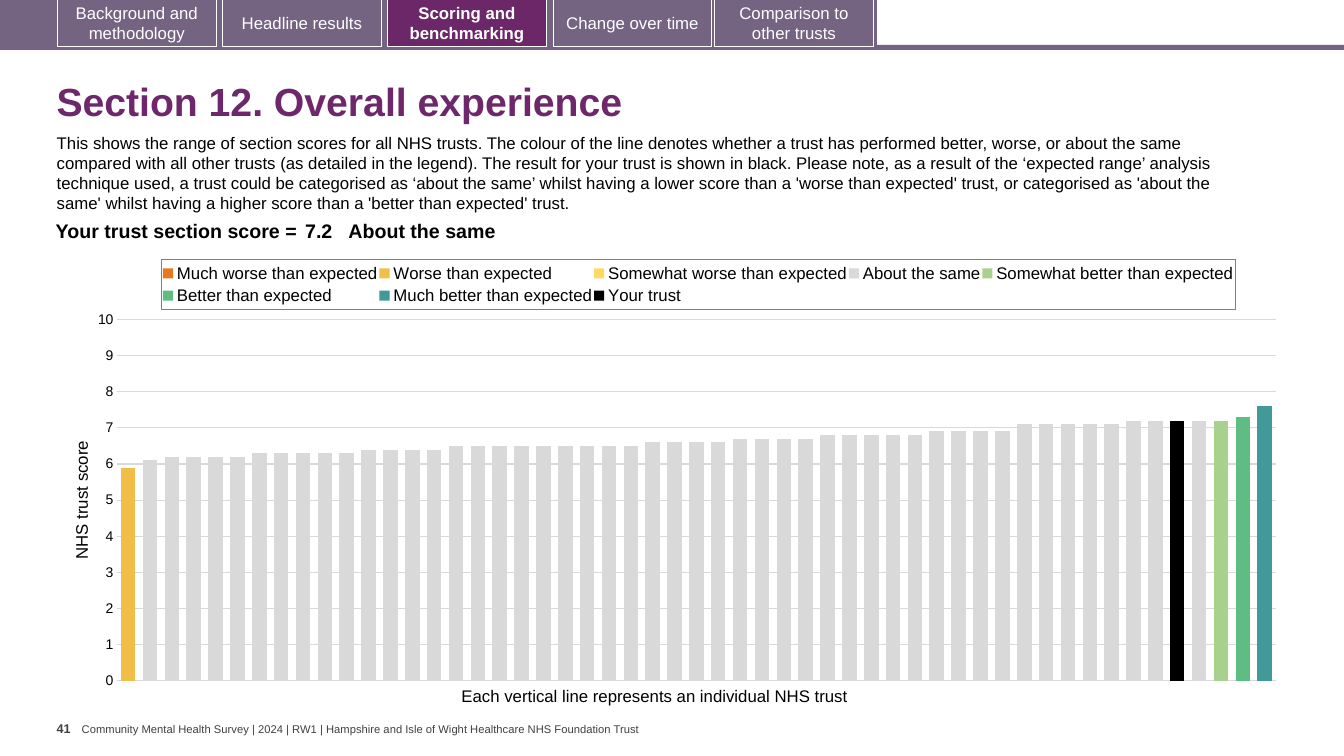
from copy import deepcopy

from pptx import Presentation
from pptx.chart.axis import ValueAxis
from pptx.chart.data import CategoryChartData
from pptx.dml.color import RGBColor
from pptx.enum import chart as kinds, shapes, text
from pptx.oxml import parse_xml
from pptx.oxml.ns import nsdecls
from pptx.util import Cm, Pt

TABS = [
    ("Background and methodology", 1.45),
    ("Headline results", 5.61),
    ("Scoring and benchmarking", 9.77),
    ("Change over time", 13.94),
    ("Comparison to other trusts", 18.01),
]
ACTIVE = "Scoring and benchmarking"
TITLE = "Section 12. Overall experience"
INTRO = (
    "This shows the range of section scores for all NHS trusts. The colour of the line "
    "denotes whether a trust has performed better, worse, or about the same compared with "
    "all other trusts (as detailed in the legend). The result for your trust is shown in "
    "black. Please note, as a result of the ‘expected range’ analysis technique used, a "
    "trust could be categorised as ‘about the same’ whilst having a lower score than a "
    "'worse than expected' trust, or categorised as 'about the same' whilst having a higher "
    "score than a 'better than expected' trust."
)
SCORE = [
    ("Your trust section score =", 6.68, 0.1, text.PP_ALIGN.RIGHT),
    ("7.2", 1.19, 0.1, text.PP_ALIGN.LEFT),
    ("About the same", 21.82, 0, text.PP_ALIGN.LEFT),
]
AXIS = "NHS trust score"
CAPTION = "Each vertical line represents an individual NHS trust"
PAGE = "41"
FOOTER = ("Community Mental Health Survey | 2024 | RW1 | "
          "Hampshire and Isle of Wight Healthcare NHS Foundation Trust")
COUNT = 53
SAME = ([6.1] + [6.2] * 4 + [6.3] * 5 + [6.4] * 4 + [6.5] * 9 + [6.6] * 4
        + [6.7] * 4 + [6.8] * 5 + [6.9] * 4 + [7.1] * 5 + [7.2] * 4)
SERIES = [
    ("Much worse than expected", "E87722", 0, []),
    ("Worse than expected", "F1BE48", 0, [5.9]),
    ("Somewhat worse than expected", "FFD966", 0, []),
    ("About the same", "D9D9D9", 1, SAME),
    ("Somewhat better than expected", "A9D18E", 50, [7.2]),
    ("Better than expected", "5FBD83", 51, [7.3]),
    ("Much better than expected", "419999", 52, [7.6]),
    ("Your trust", "000000", 48, [7.2]),
]


def tint(code):
    return RGBColor.from_string(code)


def style(font, size, code="000000", bold=False, face="Arial"):
    font.name, font.size, font.bold = face, Pt(size), bold
    font.color.rgb = tint(code)


def write(frame, words, size, code="000000", bold=False, align=text.PP_ALIGN.LEFT):
    frame.text = words
    para = frame.paragraphs[0]
    para.alignment = align
    style(para.runs[0].font, size, code, bold)


def label(words, box, size, code="000000", bold=False, wrap=False, pads=None):
    frame = slide.shapes.add_textbox(*map(Cm, box)).text_frame
    frame.word_wrap = wrap
    if pads:
        frame.margin_left = frame.margin_right = Cm(pads[0])
        frame.margin_top = frame.margin_bottom = Cm(pads[1])
    write(frame, words, size, code, bold)
    return frame


def block(box, code, edge=None):
    shape = slide.shapes.add_shape(shapes.MSO_SHAPE.RECTANGLE, *map(Cm, box))
    shape.shadow.inherit = False
    shape.fill.solid()
    shape.fill.fore_color.rgb = tint(code)
    if edge:
        shape.line.color.rgb = tint(edge)
        shape.line.width = Pt(0.75)
    else:
        shape.line.fill.background()
    return shape


def layout(x, y, w, h, inner=False):
    target = '<c:layoutTarget val="inner"/>' if inner else ""
    return parse_xml(
        f'<c:layout {nsdecls("c")}><c:manualLayout>{target}'
        '<c:xMode val="edge"/><c:yMode val="edge"/>'
        f'<c:x val="{x}"/><c:y val="{y}"/><c:w val="{w}"/><c:h val="{h}"/>'
        '</c:manualLayout></c:layout>')


def place(parent, spot, item):
    for old in parent.xpath("./c:layout"):
        parent.remove(old)
    parent.insert(spot, item)


def split(area):
    bars, cat, val = (area.xpath(f"./c:{tag}")[0] for tag in ("barChart", "catAx", "valAx"))
    extra = [deepcopy(item) for item in (bars, cat, val)]
    own = bars.xpath("./c:ser")
    bars.remove(own[-1])
    for ser in extra[0].xpath("./c:ser")[:-1]:
        extra[0].remove(ser)
    olds = [item.get("val") for item in bars.xpath("./c:axId")]
    fresh = dict(zip(olds, ("5001", "5002")))
    for part in extra:
        for ref in part.xpath("./c:axId | ./c:crossAx"):
            ref.set("val", fresh[ref.get("val")])
    bars.addnext(extra[0])
    val.addnext(extra[1])
    val.addnext(extra[2])
    extra[2].xpath("./c:axPos")[0].set("val", "r")
    extra[2].xpath("./c:crosses")[0].set("val", "max")
    right = ValueAxis(extra[2])
    right.has_title = right.has_major_gridlines = False
    right.major_tick_mark = kinds.XL_TICK_MARK.OUTSIDE
    right.tick_label_position = kinds.XL_TICK_LABEL_POSITION.NONE
    style(right.tick_labels.font, 12, "595959", face="Calibri")


deck = Presentation()
deck.slide_width, deck.slide_height = Cm(33.87), Cm(19.05)
slide = deck.slides.add_slide(deck.slide_layouts[5])

block((0, 1.13, 33.87, 0.13), "756382")
block((0, 0, 22.1, 1.19), "756382")
for words, left in TABS:
    chosen = words == ACTIVE
    tab = block((left, -0.03, 4, 1.2), "6B2768" if chosen else "756382", "FFFFFF")
    tab.text_frame.word_wrap = True
    tab.text_frame.vertical_anchor = text.MSO_ANCHOR.MIDDLE
    write(tab.text_frame, words, 12, "FFFFFF", chosen, text.PP_ALIGN.CENTER)

title = slide.shapes.title
title.left, title.top, title.width, title.height = map(Cm, (1.17, 1.7, 31.72, 1.83))
title.text_frame.auto_size = text.MSO_AUTO_SIZE.NONE
title.text_frame.vertical_anchor = text.MSO_ANCHOR.MIDDLE
write(title.text_frame, TITLE, 28, "6D276A", True)
title.text_frame.paragraphs[0].line_spacing = 0.9

label(INTRO, (1.18, 3.22, 30.81, 2.31), 12, wrap=True)

data = CategoryChartData(number_format="0.0")
data.categories = [str(n + 1) for n in range(COUNT)]
for name, code, start, vals in SERIES:
    rest = COUNT - start - len(vals)
    data.add_series(name, [None] * start + vals + [None] * rest)
chart = slide.shapes.add_chart(
    kinds.XL_CHART_TYPE.COLUMN_CLUSTERED,
    *map(Cm, (1.72, 6.27, 30.86, 11.27)), data).chart
chart.has_title = False
style(chart.font, 10, face="Calibri")
plot = chart.plots[0]
plot.gap_width, plot.overlap, plot.vary_by_categories = 50, 100, False
for series, (name, code, start, vals) in zip(plot.series, SERIES):
    series.format.fill.solid()
    series.format.fill.fore_color.rgb = tint(code)
    series.invert_if_negative = False

chart.category_axis.visible = False
axis = chart.value_axis
axis.minimum_scale, axis.maximum_scale, axis.major_unit = 0, 10, 1
axis.major_tick_mark = kinds.XL_TICK_MARK.NONE
axis.format.line.fill.background()
axis.major_gridlines.format.line.color.rgb = tint("D9D9D9")
axis.major_gridlines.format.line.width = Pt(0.75)
axis.tick_labels.number_format = "0"
axis.tick_labels.number_format_is_linked = False
style(axis.tick_labels.font, 10)
write(axis.axis_title.text_frame, AXIS, 12, align=text.PP_ALIGN.CENTER)

chart.has_legend = True
chart.legend.position = kinds.XL_LEGEND_POSITION.TOP
chart.legend.include_in_layout = False
style(chart.legend.font, 12)
root = chart.element
area, key = root.xpath("//c:plotArea")[0], root.xpath("//c:legend")[0]
split(area)
place(area, 0, layout(0.04, 0.158, 0.946, 0.808, True))
place(key, 1, layout(0.076, 0.025, 0.877, 0.11))
key.xpath("./c:txPr")[0].addprevious(parse_xml(
    f'<c:spPr {nsdecls("c", "a")}><a:ln w="9525"><a:solidFill>'
    '<a:srgbClr val="7F7F7F"/></a:solidFill></a:ln></c:spPr>'))

label(CAPTION, (11.38, 17.15, 10.44, 0.76), 12)

wide = sum(item[1] for item in SCORE)
grid = slide.shapes.add_table(1, len(SCORE), *map(Cm, (0.91, 5.46, wide, 0.79))).table
grid.first_row = grid.horz_banding = False
for num, (words, width, pad, align) in enumerate(SCORE):
    grid.columns[num].width = Cm(width)
    cell = grid.cell(0, num)
    cell.fill.background()
    cell.margin_left = cell.margin_right = Cm(pad)
    cell.margin_top = cell.margin_bottom = Cm(0.1)
    write(cell.text_frame, words, 14, bold=True, align=align)

label(PAGE, (1.43, 18.03, 0.64, 1.02), 9, "404040", True, pads=(0, 0.13))
foot = label(FOOTER, (2.06, 18.2, 14.22, 0.33), 8, "404040", pads=(0, 0))
foot.vertical_anchor = text.MSO_ANCHOR.MIDDLE

deck.save("out.pptx")
